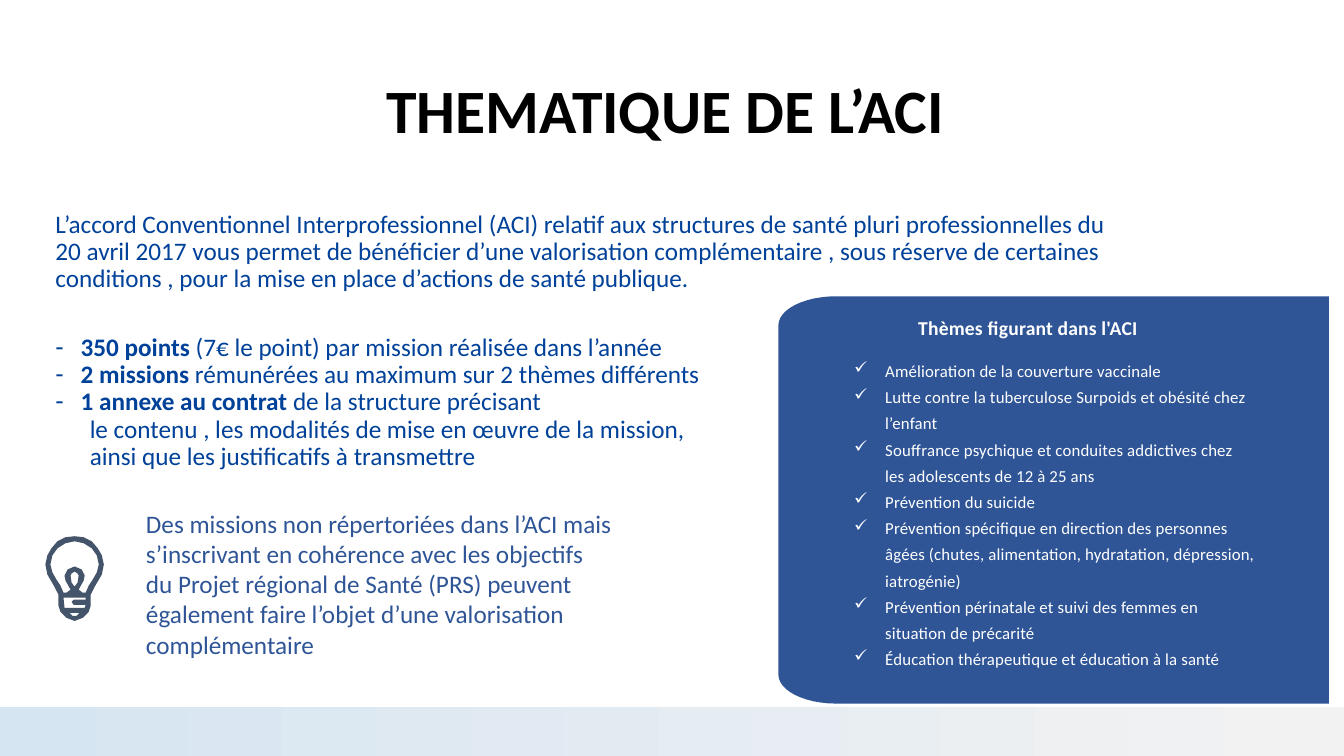
"""Build the slide on the themes of the ACI agreement."""
from math import cos, pi, sin

from lxml import etree
from pptx import Presentation
from pptx.dml.color import RGBColor
from pptx.enum.shapes import MSO_SHAPE
from pptx.enum.text import MSO_ANCHOR, MSO_AUTO_SIZE, PP_ALIGN
from pptx.oxml.ns import qn
from pptx.util import Inches, Pt

RECTANGLE = MSO_SHAPE.RECTANGLE
TOP, MIDDLE = MSO_ANCHOR.TOP, MSO_ANCHOR.MIDDLE
LEFT, CENTER = PP_ALIGN.LEFT, PP_ALIGN.CENTER
NO_FIT = MSO_AUTO_SIZE.NONE

WIDTH, HEIGHT = 13.33, 7.5
FONT = "Calibri"
COLORS = {"title": "000000", "body": "004199", "panel": "2F5597", "white": "FFFFFF",
          "bulb": "44546A", "band_start": "D6E5F2", "band_end": "F2F2F2"}

TITLE = "THEMATIQUE DE L’ACI "
INTRO = ("L’accord Conventionnel Interprofessionnel (ACI) relatif aux structures de santé "
         "pluri professionnelles du 20 avril 2017 vous permet de bénéficier d’une valorisation "
         "complémentaire , sous réserve de certaines conditions , pour la mise en place "
         "d’actions de santé publique.")
RULES = [
    ("350 points ", "(7€ le point) par mission réalisée dans l’année"),
    ("2 missions ", "rémunérées au maximum sur 2 thèmes différents"),
    ("1 annexe au contrat ", "de la structure précisant"),
]
ANNEX = ["le contenu , les modalités de mise en œuvre de la mission,",
         "ainsi que les justificatifs à transmettre"]
THEMES_HEADING = "Thèmes figurant dans l'ACI"
THEMES = [
    "Amélioration de la couverture vaccinale",
    "Lutte contre la tuberculose Surpoids et obésité chez l’enfant",
    "Souffrance psychique et conduites addictives chez\vles adolescents de 12 à 25 ans",
    "Prévention du suicide",
    "Prévention spécifique en direction des personnes âgées (chutes, alimentation, "
    "hydratation, dépression, iatrogénie)",
    "Prévention périnatale et suivi des femmes en situation de précarité",
    "Éducation thérapeutique et éducation à la santé",
]
ADVICE = ("Des missions non répertoriées dans l’ACI mais s’inscrivant en cohérence avec les "
          "objectifs du Projet régional de Santé (PRS) peuvent également faire l’objet d’une "
          "valorisation complémentaire")

BOXES = {"title": (0.92, 0.4, 11.5, 1.45), "body": (0.45, 2.05, 10.73, 4.76),
         "band": (0, 7.01, WIDTH, 0.49), "heading": (7.72, 3.12, 4.95, 0.25),
         "themes": (8.45, 3.51, 4.01, 3.13), "advice": (1.35, 5.39, 4.83, 0.8)}
PANEL = (7.72, 2.94, 13.18, 6.98)
PANEL_RADII = (0.57, 0.29)
UNITS_PER_INCH = 1000

BULB_AXIS = 0.74
BULB_HALVES = {
    "silhouette": [(0.74, 5.32), (0.65, 5.33), (0.57, 5.37), (0.51, 5.44), (0.47, 5.51),
                   (0.45, 5.6), (0.47, 5.7), (0.54, 5.82), (0.58, 5.9), (0.58, 6.01),
                   (0.6, 6.07), (0.66, 6.13), (0.74, 6.16)],
    "glass": [(0.74, 5.37), (0.65, 5.39), (0.57, 5.44), (0.52, 5.51), (0.5, 5.6),
              (0.52, 5.68), (0.56, 5.75), (0.6, 5.81), (0.63, 5.88), (0.66, 5.88),
              (0.7, 5.85), (0.65, 5.76), (0.64, 5.71), (0.67, 5.65), (0.74, 5.62)],
    "filament": [(0.74, 5.67), (0.71, 5.69), (0.7, 5.71), (0.71, 5.78), (0.74, 5.82)],
    "foot": [(0.69, 6.08), (0.72, 6.11)],
}
BULB_SOCKET = [(0.63, 5.93), (0.85, 5.93), (0.85, 5.95), (0.73, 5.95), (0.71, 5.97),
               (0.73, 6), (0.85, 6), (0.84, 6.03), (0.64, 6.03)]


def rgb(name):
    return RGBColor.from_string(COLORS[name])


def apply(target, values):
    for name, value in values.items():
        setattr(target, name, value)


def inches(box):
    return [Inches(length) for length in box]


def place(shape, box):
    apply(shape, dict(zip(("left", "top", "width", "height"), inches(box))))


def prepare(frame, anchor=TOP, margins=(0.1, 0.05, 0.1, 0.05)):
    sides = ("margin_left", "margin_top", "margin_right", "margin_bottom")
    apply(frame, dict(zip(sides, inches(margins)), word_wrap=True, auto_size=NO_FIT,
                      vertical_anchor=anchor))
    return frame


def write(frame, runs, size, color, align=LEFT, bullet=None, indent=(0, 0),
          tracking=0, **spacing):
    """Add one paragraph made of (text, bold) runs."""
    paragraph = frame.paragraphs[0]
    if paragraph.runs:
        paragraph = frame.add_paragraph()
    formats = {"alignment": align, "space_before": Pt(0), "space_after": Pt(0), **spacing}
    apply(paragraph, formats)
    properties = paragraph._p.get_or_add_pPr()
    for name, length in zip(("marL", "indent"), indent):
        properties.set(name, str(Inches(length)))
    if bullet:
        etree.SubElement(properties, qn("a:buChar")).set("char", bullet)
    else:
        etree.SubElement(properties, qn("a:buNone"))
    for text, bold in runs:
        for part_index, part in enumerate(text.split("\v")):
            if part_index:
                paragraph.add_line_break()
            run = paragraph.add_run()
            run.text = part
            apply(run.font, {"name": FONT, "size": Pt(size), "bold": bold})
            run.font.color.rgb = rgb(color)
            if tracking:
                run.font._element.set("spc", str(tracking))


def add_text(slide, box, **frame_values):
    return prepare(slide.shapes.add_textbox(*inches(box)).text_frame, **frame_values)


def add_outline(slide, contours, color):
    first, *others = [[(round(x * UNITS_PER_INCH), round(y * UNITS_PER_INCH)) for x, y in contour]
                      for contour in contours]
    builder = slide.shapes.build_freeform(*first[0], scale=Inches(1) / UNITS_PER_INCH)
    builder.add_line_segments(first[1:], close=True)
    for contour in others:
        builder.move_to(*contour[0])
        builder.add_line_segments(contour[1:], close=True)
    shape = builder.convert_to_shape()
    shape.shadow.inherit = False
    shape.fill.solid()
    shape.fill.fore_color.rgb = rgb(color)
    shape.line.fill.background()


def panel_points():
    left, top, right, bottom = PANEL
    radius_x, radius_y = PANEL_RADII
    angles = [step * pi / 24 for step in range(13)]
    corner = [(left + radius_x * (1 - sin(a)), radius_y * (1 - cos(a))) for a in angles]
    lower = [(x, bottom - y) for x, y in corner]
    upper = [(x, top + y) for x, y in reversed(corner)]
    return [(right, bottom), *lower, *upper, (right, top)]


def mirrored(half):
    return half + [(2 * BULB_AXIS - x, y) for x, y in reversed(half)]


def add_band(slide):
    band = slide.shapes.add_shape(RECTANGLE, *inches(BOXES["band"]))
    band.shadow.inherit = False
    band.line.fill.background()
    band.fill.gradient()
    band.fill.gradient_angle = 0
    for stop, name, position in zip(band.fill.gradient_stops, ("band_start", "band_end"), (0, 0.98)):
        stop.color.rgb = rgb(name)
        stop.position = position


def fill_placeholders(slide):
    title, body = slide.placeholders
    place(title, BOXES["title"])
    place(body, BOXES["body"])
    write(prepare(title.text_frame, MIDDLE), [(TITLE, True)], 44, "title", CENTER, line_spacing=0.9)
    frame = prepare(body.text_frame)
    style = {"size": 18, "color": "body", "line_spacing": 0.9}
    write(frame, [(INTRO, False)], space_before=Pt(10), **style)
    for index, (lead, rest) in enumerate(RULES):
        write(frame, [(lead, True), (rest, False)], bullet="-", indent=(0.25, -0.25),
              space_before=Pt(0 if index else 29.5), **style)
    for line in ANNEX:
        write(frame, [(line, False)], indent=(0.34, 0), **style)


def add_themes(slide):
    add_outline(slide, [panel_points()], "panel")
    margins = (0, 0.01, 0, 0)
    heading = add_text(slide, BOXES["heading"], margins=margins)
    write(heading, [(THEMES_HEADING, True)], 14, "white", CENTER, tracking=10, space_before=Pt(1))
    themes = add_text(slide, BOXES["themes"], margins=margins)
    for theme in THEMES:
        write(themes, [(theme, False)], 12, "white", bullet="✓", indent=(0.33, -0.31),
              tracking=10, line_spacing=1.3)


def main():
    presentation = Presentation()
    apply(presentation, {"slide_width": Inches(WIDTH), "slide_height": Inches(HEIGHT)})
    slide = presentation.slides.add_slide(presentation.slide_layouts[1])
    add_band(slide)
    fill_placeholders(slide)
    add_themes(slide)
    write(add_text(slide, BOXES["advice"], anchor=MIDDLE), [(ADVICE, False)], 18, "panel")
    add_outline(slide, [*map(mirrored, BULB_HALVES.values()), BULB_SOCKET], "bulb")
    presentation.save("out.pptx")


if __name__ == "__main__":
    main()
